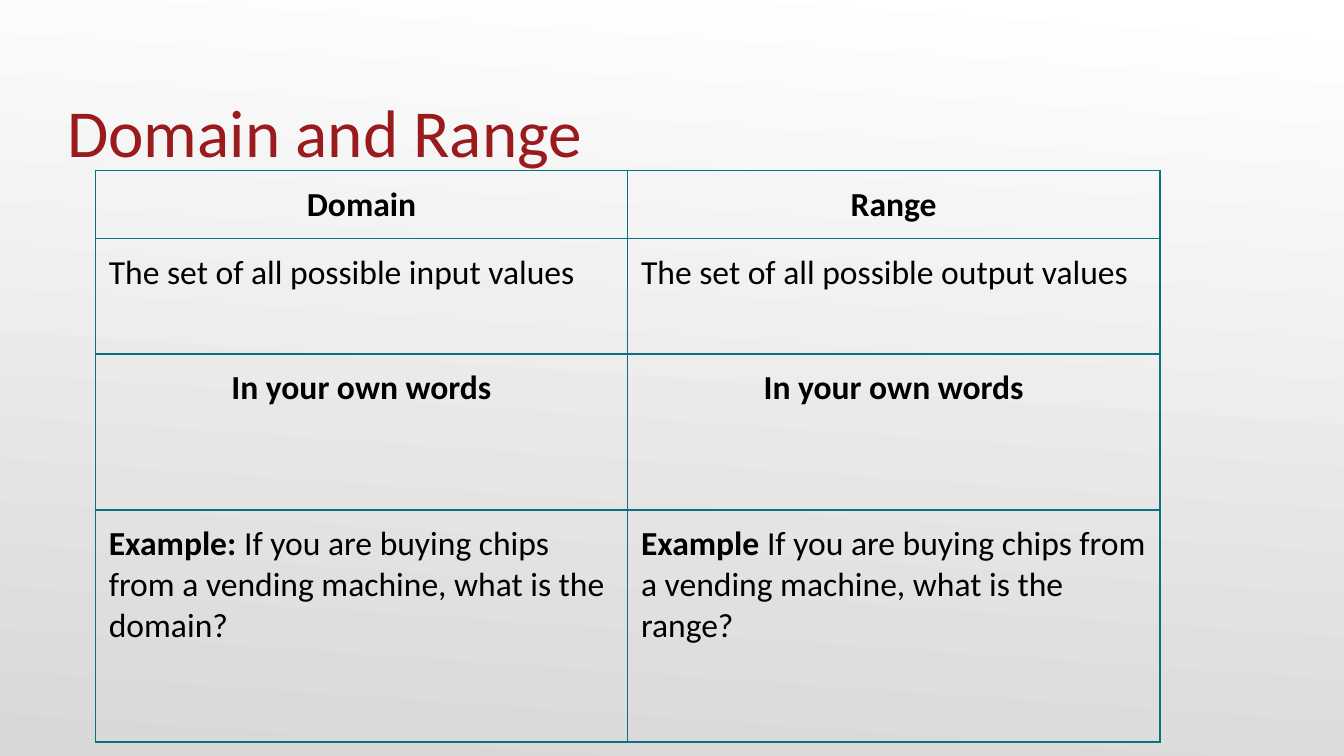
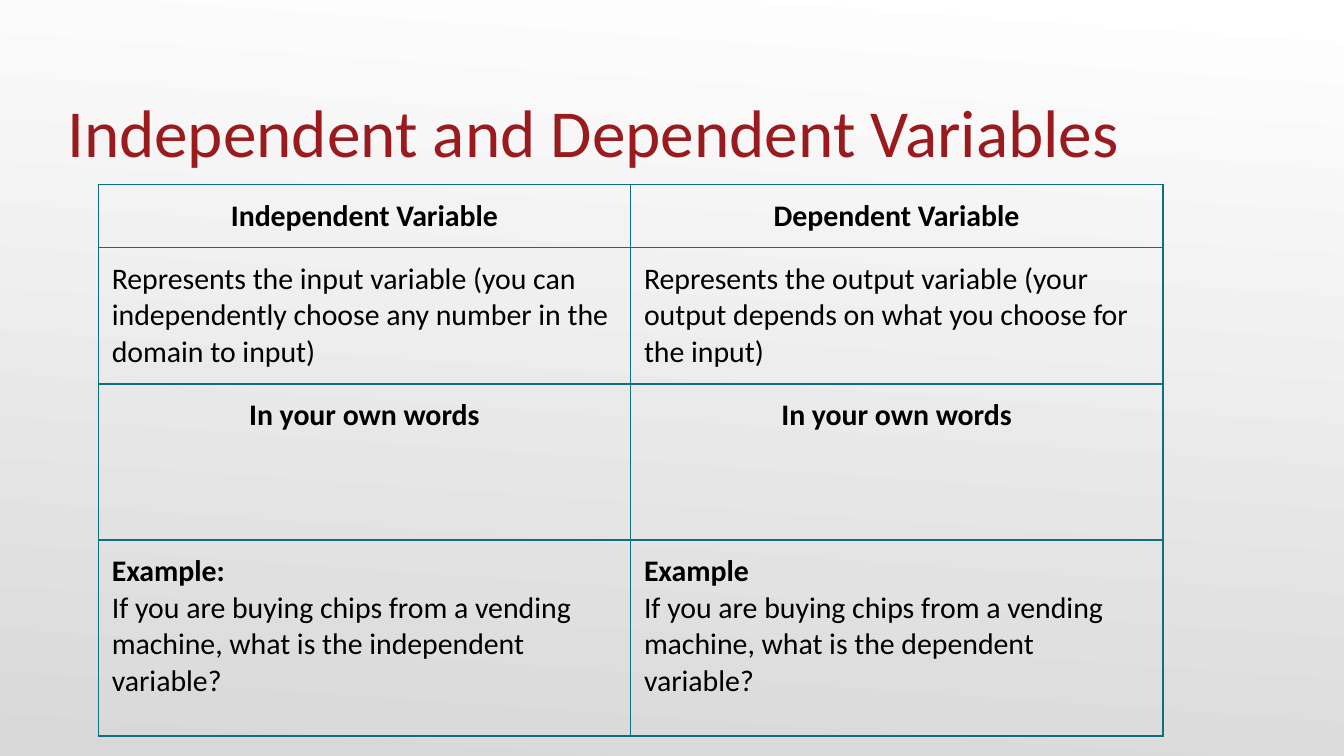
from typing import NamedTuple

from lxml import etree
from pptx import Presentation, util as u
from pptx.dml import color
from pptx.enum import text as t
from pptx.oxml import ns

COLS, ROWS = 100, 56.25
FONT = "Calibri"
RED, TEAL, BLACK = "991B1E", "0D707E", "000000"
STOPS = ("FFFFFF", "D8D8D8")
ANGLE = 360 - 94
COL = 39.6


class Box(NamedTuple):
    x: float
    y: float
    w: float
    h: float


class Line(NamedTuple):
    bold: str = ""
    plain: str = ""


class Page(NamedTuple):
    title: str
    x: float
    y: float
    size: int
    rows: list[float]
    cells: list[list[list[Line]]]


HEAD = Box(5, 3.35, 90, 9.38)
OWN = [Line("In your own words")]

PAGES = [
    Page("Domain and Range", 7.1, 12.7, 18, [5.06, 8.6, 11.6, 17.25], [
        [[Line("Domain")], [Line("Range")]],
        [[Line(plain="The set of all possible input values")],
         [Line(plain="The set of all possible output values")]],
        [OWN, OWN],
        [[Line("Example: ", "If you are buying chips from a vending machine, what is the domain?")],
         [Line("Example ", "If you are buying chips from a vending machine, what is the range?")]],
    ]),
    Page("Independent and Dependent Variables", 7.32, 13.72, 16, [4.7, 10.15, 11.6, 14.6], [
        [[Line("Independent Variable")], [Line("Dependent Variable")]],
        [[Line(plain="Represents the input variable (you can independently choose any number in the domain to input)")],
         [Line(plain="Represents the output variable (your output depends on what you choose for the input)")]],
        [OWN, OWN],
        [[Line("Example:"),
          Line(plain="If you are buying chips from a vending machine, what is the independent variable?")],
         [Line("Example"),
          Line(plain="If you are buying chips from a vending machine, what is the dependent variable?")]],
    ]),
]


def grid(n: float) -> int:
    return u.Inches(n / 10)


def rgb(code: str) -> color.RGBColor:
    return color.RGBColor.from_string(code)


def style(para, size: int, code: str) -> None:
    font = para.font
    font.name, font.size = FONT, u.Pt(size)
    font.color.rgb = rgb(code)


def back(slide) -> None:
    fill = slide.background.fill
    fill.gradient()
    fill.gradient_angle = ANGLE
    for stop, code in zip(fill.gradient_stops, STOPS):
        stop.color.rgb = rgb(code)


def title(slide, words: str) -> None:
    frame = slide.shapes.add_textbox(*map(grid, HEAD)).text_frame
    frame.word_wrap = True
    frame.vertical_anchor = t.MSO_ANCHOR.BOTTOM
    frame.margin_left = frame.margin_right = frame.margin_bottom = 0
    frame.margin_top = grid(0.5)
    para = frame.paragraphs[0]
    para.text = words
    style(para, 36, RED)


def border(cell) -> None:
    props = cell._tc.get_or_add_tcPr()
    for side in "LRTB":
        edge = etree.SubElement(props, ns.qn(f"a:ln{side}"), w=str(u.Pt(1)))
        fill = etree.SubElement(edge, ns.qn("a:solidFill"))
        etree.SubElement(fill, ns.qn("a:srgbClr"), val=TEAL)


def write(cell, lines: list[Line], size: int, mid: bool) -> None:
    border(cell)
    cell.fill.background()
    cell.margin_left = cell.margin_right = grid(1)
    cell.margin_top = cell.margin_bottom = grid(1)
    frame = cell.text_frame
    for i, line in enumerate(lines):
        para = frame.add_paragraph() if i else frame.paragraphs[0]
        para.alignment = t.PP_ALIGN.CENTER if mid else t.PP_ALIGN.LEFT
        style(para, size, BLACK)
        for words, bold in ((line.bold, True), (line.plain, False)):
            if words:
                run = para.add_run()
                run.text, run.font.bold = words, bold


def table(slide, page: Page) -> None:
    box = Box(page.x, page.y, 2 * COL, sum(page.rows))
    tab = slide.shapes.add_table(len(page.rows), 2, *map(grid, box)).table
    tab.first_row = tab.horz_banding = False
    for col in tab.columns:
        col.width = grid(COL)
    for r, high in enumerate(page.rows):
        tab.rows[r].height = grid(high)
        for c, lines in enumerate(page.cells[r]):
            write(tab.cell(r, c), lines, page.size, r in (0, 2))


def main() -> None:
    deck = Presentation()
    deck.slide_width, deck.slide_height = grid(COLS), grid(ROWS)
    for page in PAGES:
        slide = deck.slides.add_slide(deck.slide_layouts[6])
        back(slide)
        title(slide, page.title)
        table(slide, page)
    deck.save("out.pptx")


if __name__ == "__main__":
    main()
